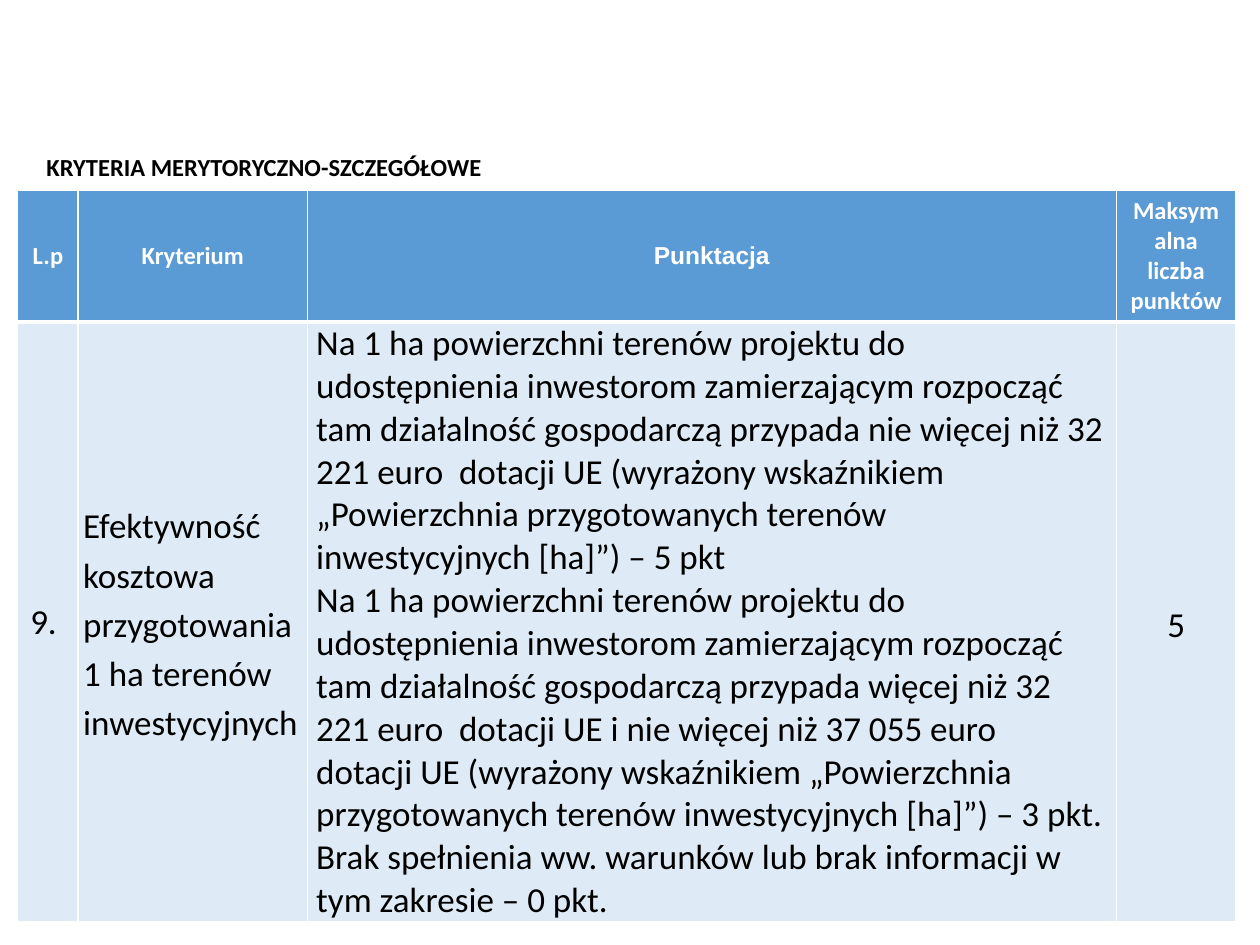
"""Build a slide with a table of scoring criteria."""
import pptx
import pptx.util
import pptx.dml.color
import pptx.enum.text
import lxml.etree

Inches = pptx.util.Inches
Pt = pptx.util.Pt
RGBColor = pptx.dml.color.RGBColor
ALIGN = pptx.enum.text.PP_ALIGN
ANCHOR = pptx.enum.text.MSO_ANCHOR

WHITE = RGBColor(0xFF, 0xFF, 0xFF)
BLACK = RGBColor(0, 0, 0)
BLUE = RGBColor(0x5B, 0x9B, 0xD5)
PALE = RGBColor(0xDE, 0xEB, 0xF7)
NS = "http://schemas.openxmlformats.org/drawingml/2006/main"


def style(frame, size, color, bold, align, font="Calibri"):
    for para in frame.paragraphs:
        para.alignment = align
        for run in para.runs:
            run.font.name = font
            run.font.size = Pt(size)
            run.font.bold = bold
            run.font.color.rgb = color


def border(cell, widths):
    props = cell._tc.get_or_add_tcPr()
    for spot, (side, width) in enumerate(widths.items()):
        line = lxml.etree.Element(f"{{{NS}}}{side}", w=str(Pt(width)))
        fill = lxml.etree.SubElement(line, f"{{{NS}}}solidFill")
        lxml.etree.SubElement(fill, f"{{{NS}}}srgbClr", val=str(WHITE))
        props.insert(spot, line)


deck = pptx.Presentation()
deck.slide_width = Inches(10)
deck.slide_height = Inches(7.5)
slide = deck.slides.add_slide(deck.slide_layouts[6])

heads = ["L.p", "Kryterium", "Punktacja", "Maksymalna liczba punktów"]
points = [
    "Na 1 ha powierzchni terenów projektu do udostępnienia inwestorom "
    "zamierzającym rozpocząć tam działalność gospodarczą przypada nie więcej "
    "niż 32 221 euro  dotacji UE (wyrażony wskaźnikiem „Powierzchnia "
    "przygotowanych terenów inwestycyjnych [ha]”) – 5 pkt",
    "Na 1 ha powierzchni terenów projektu do udostępnienia inwestorom "
    "zamierzającym rozpocząć tam działalność gospodarczą przypada więcej "
    "niż 32 221 euro  dotacji UE i nie więcej niż 37 055 euro  dotacji UE "
    "(wyrażony wskaźnikiem „Powierzchnia przygotowanych terenów "
    "inwestycyjnych [ha]”) – 3 pkt.",
    "Brak spełnienia ww. warunków lub brak informacji w tym zakresie – 0 pkt.",
]
body = [
    "9.",
    "Efektywność kosztowa przygotowania 1 ha terenów inwestycyjnych",
    "\n".join(points),
    "5",
]

table = slide.shapes.add_table(
    2, 4, Inches(0.14), Inches(1.51), Inches(9.67), Inches(5.47)
).table
for col, width in zip(table.columns, [0.48, 1.82, 6.42, 0.95]):
    col.width = Inches(width)
for row, height in zip(table.rows, [0.94, 4.53]):
    row.height = Inches(height)

for col, text in enumerate(heads):
    cell = table.cell(0, col)
    cell.text_frame.text = text
    cell.vertical_anchor = ANCHOR.MIDDLE
    font = "Arial" if text == "Punktacja" else "Calibri"
    style(cell.text_frame, 14, WHITE, True, ALIGN.CENTER, font)
    cell.fill.solid()
    cell.fill.fore_color.rgb = BLUE
    border(cell, {"lnL": 1, "lnR": 1, "lnT": 1, "lnB": 3})

for col, text in enumerate(body):
    cell = table.cell(1, col)
    cell.text_frame.text = text
    cell.vertical_anchor = ANCHOR.TOP if col == 2 else ANCHOR.MIDDLE
    align = ALIGN.CENTER if col == 3 else ALIGN.LEFT
    style(cell.text_frame, 20, BLACK, False, align)
    if col in (1, 3):
        cell.text_frame.paragraphs[0].line_spacing = 1.15
        cell.margin_left = cell.margin_right = Inches(0.04)
        cell.margin_top = cell.margin_bottom = Inches(0.04)
    elif col == 2:
        cell.margin_left = cell.margin_right = Inches(0.07)
        cell.margin_top = cell.margin_bottom = Inches(0)
    cell.fill.solid()
    cell.fill.fore_color.rgb = PALE
    border(cell, {"lnL": 1, "lnR": 1, "lnT": 3, "lnB": 1})

title = slide.shapes.add_textbox(
    Inches(0.27), Inches(1.15), Inches(3.68), Inches(0.34)
).text_frame
title.text = "KRYTERIA MERYTORYCZNO-SZCZEGÓŁOWE"
title.word_wrap = False
title.auto_size = pptx.enum.text.MSO_AUTO_SIZE.SHAPE_TO_FIT_TEXT
title.vertical_anchor = ANCHOR.MIDDLE
style(title, 14, BLACK, True, ALIGN.LEFT)

deck.save("out.pptx")
